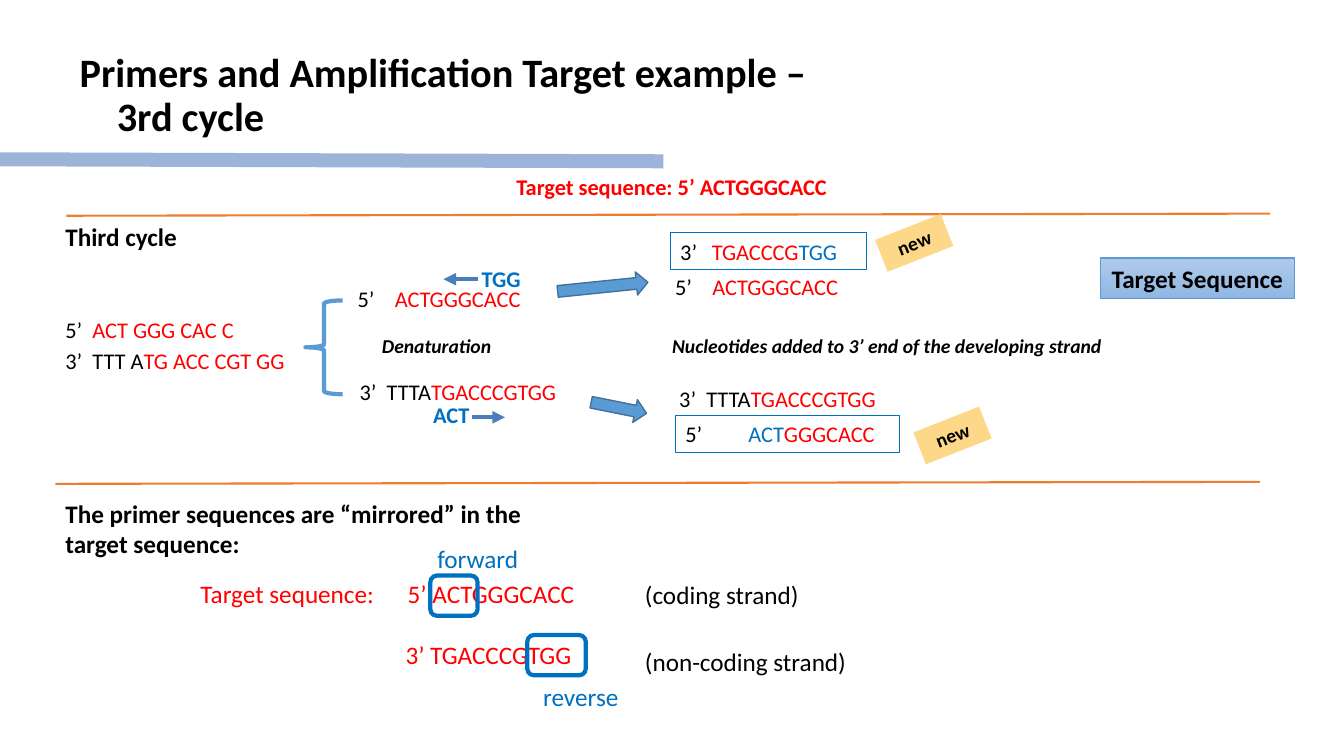
from pptx import Presentation
from pptx.dml.color import RGBColor
from pptx.enum.shapes import MSO_CONNECTOR, MSO_SHAPE
from pptx.enum.text import MSO_ANCHOR, PP_ALIGN
from pptx.oxml.ns import qn
from pptx.util import Pt
from lxml import etree

RECT, ROUND = MSO_SHAPE.RECTANGLE, MSO_SHAPE.ROUNDED_RECTANGLE
ARROW, BRACE = MSO_SHAPE.RIGHT_ARROW, MSO_SHAPE.LEFT_BRACE
STRAIGHT = MSO_CONNECTOR.STRAIGHT
TOP, MIDDLE = MSO_ANCHOR.TOP, MSO_ANCHOR.MIDDLE
LEFT, CENTER = PP_ALIGN.LEFT, PP_ALIGN.CENTER

FONT = "Calibri"
BLACK, RED, BLUE = "000000", "FF0000", "0070C0"
ORANGE, ARROW_FILL, ARROW_LINE = "ED7D31", "5B9BD5", "42719B"
PRIMER_LINE, NOTE_FILL, BAND = "4A7DBA", "FDD888", "9CB3DA"

# Content; all lengths in points
TITLE = "Primers and Amplification Target example –\v3rd cycle"
LONG_STRAND = [("3’\tTTTA", BLACK), ("TGACCCGTGG", RED)]
SHORT_STRAND = [("5’\t", BLACK), ("ACTGGGCACC", RED)]

# (left, top, width, height), size, style, runs, tab stop
LABELS = [
    ((39.6, 154.8, 208.8, 28.8), 18, "b", [("Third cycle", BLACK)], None),
    ((265.7, 234.7, 121.7, 24.5), 14, "bi", [("Denaturation", BLACK)], None),
    ((473, 234.7, 347.8, 24.5), 14, "bi",
     [("Nucleotides added to 3’ end of the developing strand", BLACK)], None),
    ((39.6, 222.5, 174.2, 26.6), 16, "", [("5’\t", BLACK), ("ACT GGG CAC C", RED)], 19.3),
    ((39.6, 244.1, 174.2, 26.6), 16, "",
     [("3’\tTTT A", BLACK), ("TG ACC CGT GG", RED)], 19.3),
    ((248.4, 200.2, 174.2, 26.6), 16, "", SHORT_STRAND, 26.5),
    ((475.2, 191.5, 140.4, 26.6), 16, "", SHORT_STRAND, 26.5),
    ((249.8, 266.4, 185.8, 26.6), 16, "", LONG_STRAND, 19.3),
    ((478.1, 271.4, 185.8, 26.6), 16, "", LONG_STRAND, 19.3),
    ((337, 185.8, 43.2, 26.6), 16, "b", [("TGG", BLUE)], None),
    ((302.4, 283, 43.2, 26.6), 16, "b", [("ACT", BLUE)], None),
    ((39.6, 352.1, 357.8, 51.1), 18, "b",
     [("The primer sequences are “mirrored” in the target sequence:", BLACK)], None),
    ((453.6, 410.4, 136.1, 28.8), 18, "", [("(coding strand)", BLACK)], None),
    ((453.6, 457.9, 378, 28.8), 18, "", [("(non-coding strand)", BLACK)], None),
    ((305.3, 384.5, 82.8, 28.8), 18, "", [("forward", BLUE)], None),
    ((380.9, 483.1, 82.8, 28.8), 18, "", [("reverse", BLUE)], None),
]
TARGET_HEADING = "Target sequence: 5’ ACTGGGCACC"
TARGET_LINES = [("Target sequence:\t5’ ACTGGGCACC", 148, 0), ("\t3’ TGACCCGTGG", 146.5, 22)]

# New strands in outlined boxes
NEW_STRANDS = [
    ((478.8, 166.3, 140.4, 26.6), [("3’\t", BLACK), ("TGACCCG", RED), ("TGG", BLUE)], 22.6),
    ((482.4, 296.6, 159.8, 26.6), [("5’\t", BLACK), ("ACT", BLUE), ("GGGCACC", RED)], 45),
]
NEW_NOTES = [(627.8, 161.3), (655.2, 298.8)]
BLOCK_ARROWS = [((398.2, 196.6, 64.8, 16.6), -5.8), ((421.9, 283, 40.3, 16.6), 11.3)]
PRIMER_FRAMES = [(307.4, 411.1, 33.8, 28.8), (376.6, 453.6, 41.8, 28.8)]

# (start x, start y, end x, end y), colour, width, arrowhead
LINES = [
    ((0, 113.8, 473.8, 115.2), BAND, 10, False),
    ((47.5, 154.1, 907.2, 152.6), ORANGE, 1.5, False),
    ((39.6, 345.6, 900, 344.2), ORANGE, 1.5, False),
    ((341.3, 199.4, 316.8, 199.4), PRIMER_LINE, 3, True),
    ((337, 298.1, 360.7, 298.1), PRIMER_LINE, 3, True),
]


def rgb(value):
    return RGBColor.from_string(value)


def pts(values):
    return [Pt(v) for v in values]


def format_paragraph(p, runs, size, style="", align=LEFT, tab=None):
    p.alignment = align
    if tab:
        tabs = etree.SubElement(p._p.get_or_add_pPr(), qn("a:tabLst"))
        etree.SubElement(tabs, qn("a:tab"), pos=str(Pt(tab)), algn="l")
    p.font.name, p.font.size = FONT, Pt(size)
    p.font.bold, p.font.italic = "b" in style, "i" in style
    for text, color in runs:
        r = p.add_run()
        r.text = text
        r.font.color.rgb = rgb(color)


def set_text(sp, runs, size, style="", align=LEFT, tab=None, anchor=TOP):
    tf = sp.text_frame
    tf.word_wrap, tf.vertical_anchor = True, anchor
    format_paragraph(tf.paragraphs[0], runs, size, style, align, tab)
    return tf


def add_label(box, *args, **kwargs):
    return set_text(s.shapes.add_textbox(*pts(box)), *args, **kwargs)


def add_shape(kind, box, fill=None, line=None, width=1, rotation=0):
    sp = s.shapes.add_shape(kind, *pts(box))
    sp.shadow.inherit = False
    sp.rotation = rotation
    if fill:
        sp.fill.solid()
        sp.fill.fore_color.rgb = rgb(fill)
    else:
        sp.fill.background()
    if line:
        sp.line.color.rgb = rgb(line)
        sp.line.width = Pt(width)
    else:
        sp.line.fill.background()
    return sp


def add_line(ends, color, width, arrowhead):
    line = s.shapes.add_connector(STRAIGHT, *pts(ends))
    line.line.color.rgb = rgb(color)
    line.line.width = Pt(width)
    if arrowhead:
        etree.SubElement(line.line._get_or_add_ln(), qn("a:tailEnd"), type="triangle")
    etree.SubElement(line._element.spPr, qn("a:effectLst"))


prs = Presentation()
prs.slide_width, prs.slide_height = Pt(960), Pt(540)
s = prs.slides.add_slide(prs.slide_layouts[5])

# Title, second line indented
title = s.shapes.title
title.left, title.top, title.width, title.height = pts((49.7, 30.2, 592.6, 77))
tf = title.text_frame
tf.word_wrap, tf.vertical_anchor = True, MIDDLE
tf.text = TITLE
p = tf.paragraphs[0]
p.alignment, p.line_spacing = LEFT, 0.9
p.font.name, p.font.size, p.font.bold = FONT, Pt(28.8), True
p.font.color.rgb = rgb(BLACK)
pPr = p._p.get_or_add_pPr()
pPr.set("marL", str(Pt(26.5)))
pPr.set("indent", str(Pt(-26.5)))

# Rules and primer arrows
for line in LINES:
    add_line(*line)

# Plain text
add_label((339.8, 120.2, 280.1, 26.6), [(TARGET_HEADING, RED)], 16, "b", CENTER, anchor=MIDDLE)
for box, size, style, runs, tab in LABELS:
    add_label(box, runs, size, style, tab=tab)

# Target sequence with both strands
tf = s.shapes.add_textbox(*pts((136.1, 409.7, 378, 72.7))).text_frame
tf.word_wrap = True
for i, (text, tab, gap) in enumerate(TARGET_LINES):
    p = tf.add_paragraph() if i else tf.paragraphs[0]
    format_paragraph(p, [(text, RED)], 18, tab=tab)
    p.space_before = Pt(gap)

# Denaturation brace and block arrows
add_shape(BRACE, (218.2, 214.6, 26.6, 67), line=ARROW_FILL, width=3)
for box, rotation in BLOCK_ARROWS:
    add_shape(ARROW, box, ARROW_FILL, ARROW_LINE, 1, rotation)

# New strands and their notes
for box, runs, tab in NEW_STRANDS:
    set_text(add_shape(RECT, box, line=BLUE, width=0.75), runs, 16, tab=tab)
for left, top in NEW_NOTES:
    note = add_shape(RECT, (left, top, 50.4, 24.5), NOTE_FILL, rotation=-21.5)
    set_text(note, [("new", BLACK)], 14, "b", CENTER)

# Target sequence badge
badge = add_shape(RECT, (786.2, 184.3, 138.2, 28.8), line=ARROW_FILL, width=0.75)
badge.fill.gradient()
badge.fill.gradient_angle = 270
for stop, color in zip(badge.fill.gradient_stops, ("B0CAE9", "90B8E4")):
    stop.color.rgb = rgb(color)
set_text(badge, [("Target Sequence", BLACK)], 18, "b", CENTER)

# Frames around the primer bases
for box in PRIMER_FRAMES:
    add_shape(ROUND, box, line=BLUE, width=3)

prs.save("out.pptx")
